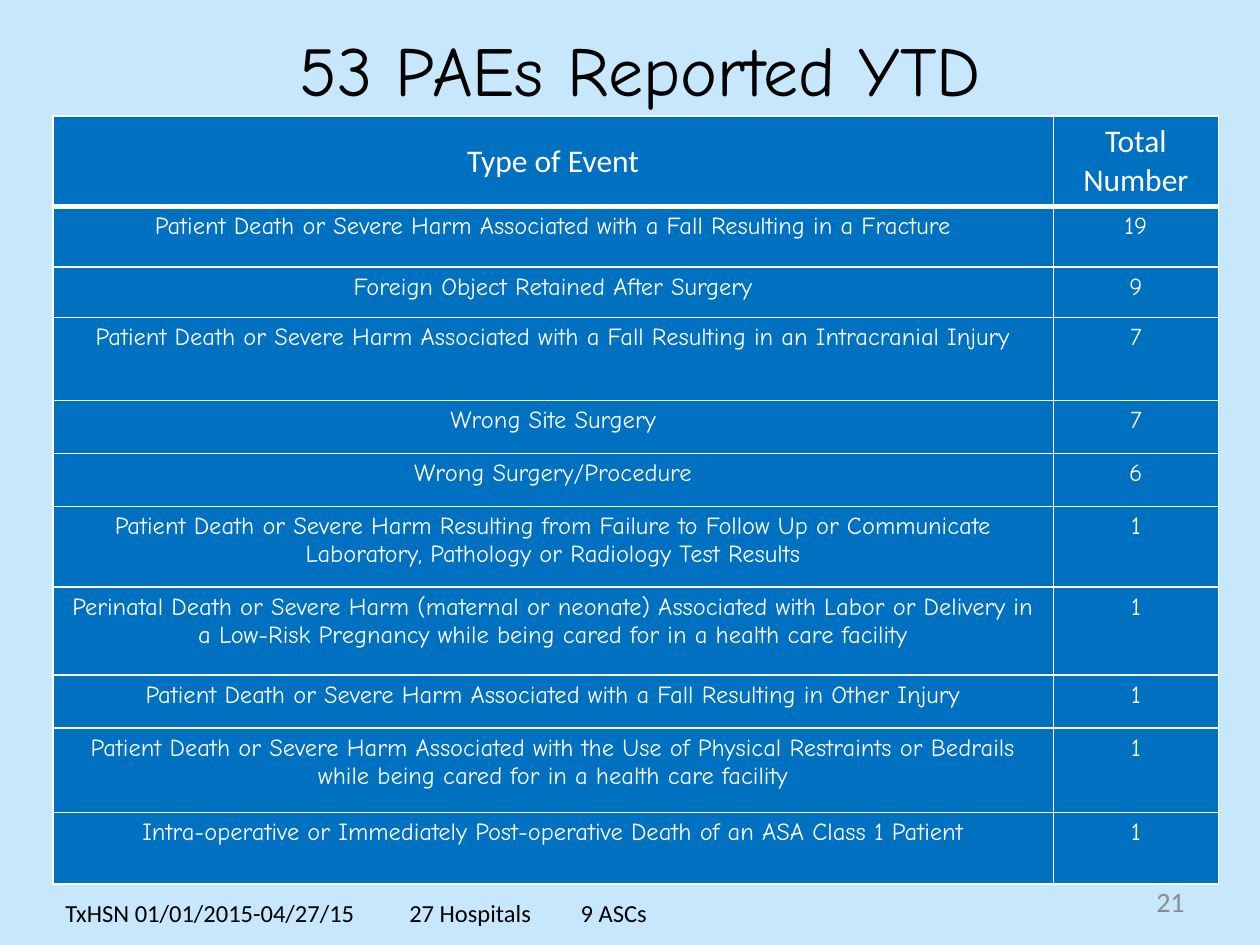
"""Build a slide that tabulates the adverse events reported year to date."""
from lxml.etree import SubElement
from pptx import Presentation
from pptx.dml.color import RGBColor
from pptx.enum.text import MSO_ANCHOR as Anchor, PP_ALIGN as Align
from pptx.oxml.ns import qn
from pptx.util import Inches, Pt

SKY = RGBColor(0xC6, 0xE7, 0xFC)
BLUE = RGBColor(0x00, 0x70, 0xC0)
WHITE = RGBColor(0xFF, 0xFF, 0xFF)
BLACK = RGBColor(0x00, 0x00, 0x00)
GRAY = RGBColor(0x8C, 0x8C, 0x8C)

HEADING_FONT = "Comic Neue"
PLAIN_FONT = "Calibri"

COLUMN_WIDTHS = (7.94, 1.31)
HEADER = ("Type of Event", "Total Number", 0.72)
EVENTS = (
    ("Patient Death or Severe Harm Associated with a Fall Resulting in a Fracture", 19, 0.48),
    ("Foreign Object Retained After Surgery", 9, 0.4),
    ("Patient Death or Severe Harm Associated with a Fall Resulting in an "
     "Intracranial Injury", 7, 0.66),
    ("Wrong Site Surgery", 7, 0.42),
    ("Wrong Surgery/Procedure", 6, 0.42),
    ("Patient Death or Severe Harm Resulting from Failure to Follow Up or Communicate "
     "Laboratory, Pathology or Radiology Test Results", 1, 0.64),
    ("Perinatal Death or Severe Harm (maternal or neonate) Associated with Labor or "
     "Delivery in a Low-Risk Pregnancy while being cared for in a health care facility", 1, 0.7),
    ("Patient Death or Severe Harm Associated with a Fall Resulting in Other Injury", 1, 0.42),
    ("Patient Death or Severe Harm Associated with the Use of Physical Restraints or "
     "Bedrails while being cared for in a health care facility", 1, 0.67),
    ("Intra-operative or Immediately Post-operative Death of an ASA Class 1 Patient", 1, 0.57),
)
FOOTER = ("TxHSN 01/01/2015-04/27/15", "27 Hospitals", "9 ASCs")
FOOTER_STOPS = (2.73, 4.09)


def write(frame, text, font=HEADING_FONT, size=14, color=WHITE, align=Align.CENTER):
    """Put formatted text in a frame and return its paragraph."""
    paragraph = frame.paragraphs[0]
    paragraph.alignment = align
    run = paragraph.add_run()
    run.text = text
    run.font.name = font
    run.font.size = Pt(size)
    run.font.color.rgb = color
    return paragraph


def add_text(slide, box, text, anchor=Anchor.MIDDLE, **style):
    """Add a wrapping text box and return its paragraph."""
    frame = slide.shapes.add_textbox(*map(Inches, box)).text_frame
    frame.word_wrap = True
    frame.vertical_anchor = anchor
    return write(frame, text, **style)


def set_tab_stops(paragraph, stops):
    """Set left tab stops, in inches, on a paragraph."""
    tabs = SubElement(paragraph._p.get_or_add_pPr(), qn("a:tabLst"))
    for stop in stops:
        SubElement(tabs, qn("a:tab"), pos=str(Inches(stop)), algn="l")


def set_borders(cell, **widths):
    """Draw white cell borders with widths in points, keyed by side."""
    properties = cell._tc.get_or_add_tcPr()
    for index, (side, width) in enumerate(widths.items()):
        line = properties.makeelement(qn(f"a:ln{side}"), {"w": str(Pt(width))})
        fill = SubElement(line, qn("a:solidFill"))
        SubElement(fill, qn("a:srgbClr"), val=str(WHITE))
        properties.insert(index, line)


def add_event_table(slide):
    """Add the table of event types and their totals."""
    records = (HEADER, *EVENTS)
    height = sum(record[-1] for record in records)
    table = slide.shapes.add_table(
        len(records), len(COLUMN_WIDTHS), Inches(0.42), Inches(0.92),
        Inches(sum(COLUMN_WIDTHS)), Inches(height)).table
    table.horz_banding = False
    for column, width in zip(table.columns, COLUMN_WIDTHS):
        column.width = Inches(width)
    for number, (event, total, row_height) in enumerate(records):
        row = table.rows[number]
        row.height = Inches(row_height)
        is_header = number == 0
        style = {"font": PLAIN_FONT, "size": 18} if is_header else {}
        for cell, value in zip(row.cells, (event, total)):
            cell.fill.solid()
            cell.fill.fore_color.rgb = BLUE
            cell.vertical_anchor = Anchor.MIDDLE if is_header else Anchor.TOP
            set_borders(cell, L=1, R=1, T=3 if number == 1 else 1, B=3 if is_header else 1)
            write(cell.text_frame, str(value), **style)


def main():
    """Assemble and save the slide."""
    deck = Presentation()
    deck.slide_width, deck.slide_height = Inches(10), Inches(7.5)
    slide = deck.slides.add_slide(deck.slide_layouts[6])
    slide.background.fill.solid()
    slide.background.fill.fore_color.rgb = SKY

    add_text(slide, (0.58, -0.08, 9, 1.25), "53 PAEs Reported YTD", size=40, color=BLACK)
    add_text(slide, (7.17, 6.95, 2.33, 0.4), "21", font=PLAIN_FONT, size=16,
             color=GRAY, align=Align.RIGHT)
    add_event_table(slide)
    footer = add_text(slide, (0.42, 7.08, 8.25, 0.34), "\t".join(FOOTER), anchor=Anchor.TOP,
                      font=PLAIN_FONT, color=BLACK, align=Align.LEFT)
    set_tab_stops(footer, FOOTER_STOPS)
    deck.save("out.pptx")


if __name__ == "__main__":
    main()
